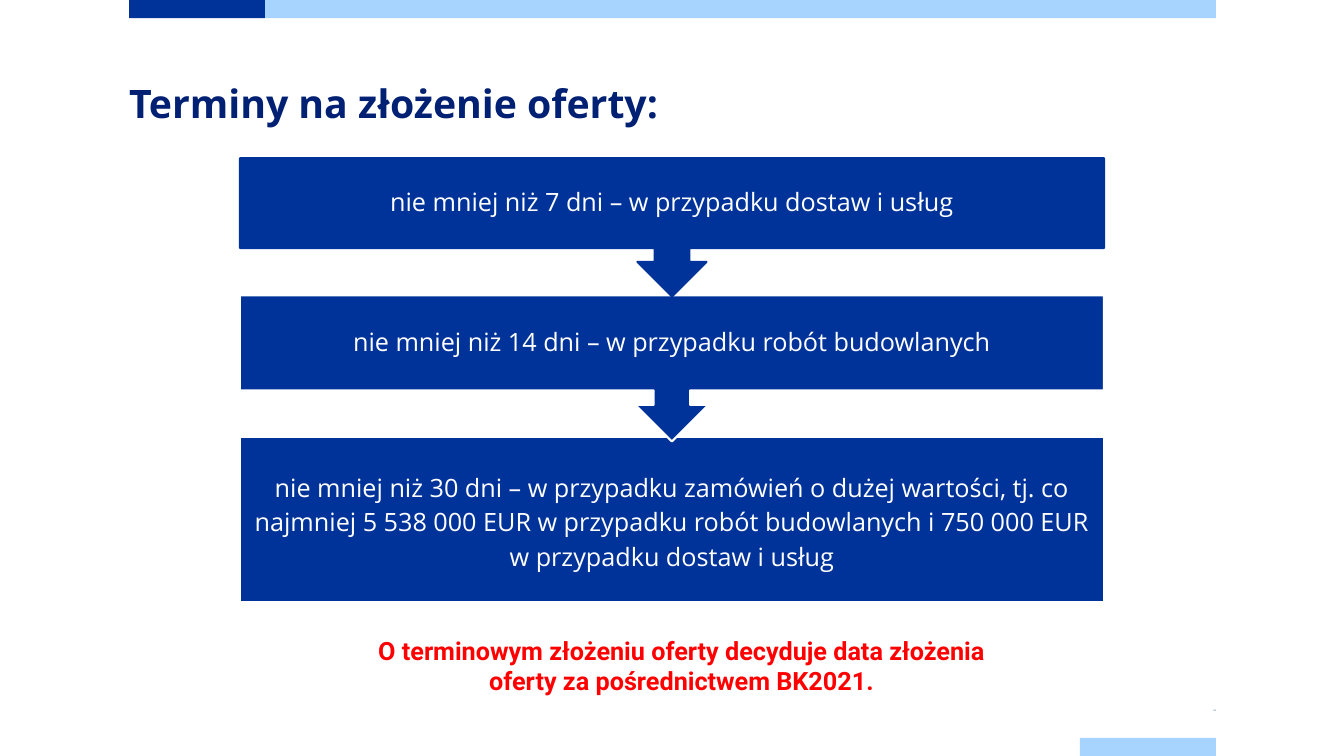
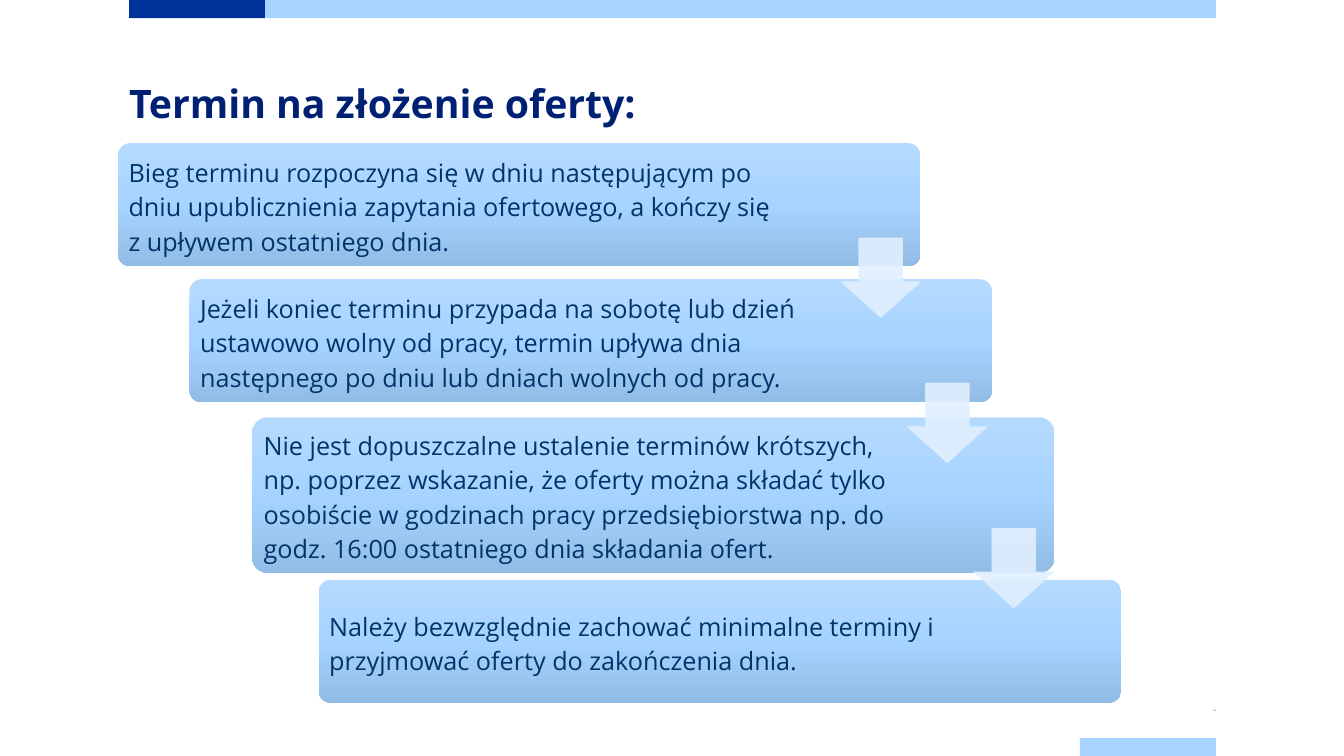
from copy import deepcopy

from lxml.etree import SubElement
from pptx import Presentation
from pptx.dml.color import RGBColor
from pptx.enum.shapes import MSO_SHAPE as Shape
from pptx.enum.text import MSO_ANCHOR as Anchor, PP_ALIGN as Align
from pptx.oxml.ns import qn
from pptx.util import Inches, Pt

NAVY = RGBColor(0x00, 0x33, 0x99)
SKY = RGBColor(0xA6, 0xD3, 0xFF)
SKY_LIGHT = RGBColor(0xB5, 0xDA, 0xFF)
SKY_DARK = RGBColor(0x91, 0xBC, 0xE5)
ICE = RGBColor(0xE1, 0xEF, 0xFF)
TITLE_BLUE = RGBColor(0x00, 0x20, 0x73)
CARD_TEXT = RGBColor(0x00, 0x35, 0x69)
WHITE = RGBColor(0xFF, 0xFF, 0xFF)
RED = RGBColor(0xFF, 0x00, 0x00)

MARGIN, CONTENT_WIDTH = 1.28, 10.78
BAND_HEIGHT, TAB_WIDTH = 0.18, 1.35
FOOTER_LEFT = MARGIN + CONTENT_WIDTH - TAB_WIDTH


class Builder:
    """Holds the deck, its style and the current page."""

    def __init__(self):
        self.deck = Presentation()
        self.deck.slide_width = Inches(13.33)
        self.deck.slide_height = Inches(7.5)
        self.page = None

    def new_page(self, title, number):
        self.page = self.deck.slides.add_slide(self.deck.slide_layouts[6])
        # Bands at the top and bottom
        self.shape(Shape.RECTANGLE, MARGIN, 0, TAB_WIDTH, BAND_HEIGHT, NAVY)
        self.shape(Shape.RECTANGLE, MARGIN + TAB_WIDTH, 0,
                   CONTENT_WIDTH - TAB_WIDTH, BAND_HEIGHT, SKY)
        self.shape(Shape.RECTANGLE, FOOTER_LEFT, 7.5 - BAND_HEIGHT,
                   TAB_WIDTH, BAND_HEIGHT, SKY)
        # Title and page number
        self.text(title, MARGIN, 0.89, CONTENT_WIDTH, 0.39, 28, TITLE_BLUE,
                  bold=True, spacing=Pt(26), insets=(0, 0, 0, 0))
        self.text(str(number), FOOTER_LEFT, 6.96, TAB_WIDTH, 0.18, 1.5,
                  TITLE_BLUE, align=Align.RIGHT, spacing=0.7,
                  anchor=Anchor.MIDDLE, insets=(0, 0.08, 0, 0.08))

    def shape(self, kind, left, top, width, height, fill=None, line=None,
              line_width=1.5):
        shape = self.page.shapes.add_shape(
            kind, Inches(left), Inches(top), Inches(width), Inches(height))
        shape.shadow.inherit = False
        if fill is not None:
            shape.fill.solid()
            shape.fill.fore_color.rgb = fill
        if line is None:
            shape.line.fill.background()
        else:
            shape.line.color.rgb = line
            shape.line.width = Pt(line_width)
        return shape

    def set_text(self, shape, text, size, color, font="Open Sans", bold=False,
                 align=Align.LEFT, spacing=1.0, anchor=Anchor.TOP,
                 insets=(0.1, 0.05, 0.1, 0.05)):
        frame = shape.text_frame
        frame.word_wrap = True
        frame.vertical_anchor = anchor
        (frame.margin_left, frame.margin_top,
         frame.margin_right, frame.margin_bottom) = map(Inches, insets)
        frame.text = text
        for para in frame.paragraphs:
            para.alignment = align
            para.line_spacing = spacing
            for span in para.runs:
                span.font.name = font
                span.font.size = Pt(size)
                span.font.bold = bold
                span.font.color.rgb = color

    def text(self, text, left, top, width, height, size, color, **style):
        box = self.page.shapes.add_textbox(
            Inches(left), Inches(top), Inches(width), Inches(height))
        self.set_text(box, text, size, color, **style)

    def step(self, kind, text, top, height, line, spacing):
        box = self.shape(kind, 2.38, top, 8.57, height, NAVY, line)
        self.set_text(box, text, 18, WHITE, align=Align.CENTER,
                      spacing=spacing, anchor=Anchor.MIDDLE,
                      insets=(0.14,) * 4)

    def card(self, text, left, top, height):
        card = self.shape(Shape.ROUNDED_RECTANGLE, left, top, 7.96, height)
        card.adjustments[0] = 0.1
        card.fill.gradient()
        card.fill.gradient_angle = 270
        # A third gradient stop
        stop_list = card._element.spPr.find(".//" + qn("a:gsLst"))
        stop_list.append(deepcopy(stop_list[0]))
        for stop, position, color in zip(card.fill.gradient_stops, (0, 0.5, 1),
                                         (SKY_LIGHT, SKY, SKY_DARK)):
            stop.position = position
            stop.color.rgb = color
        self.set_text(card, text, 18, CARD_TEXT, spacing=1.14,
                      anchor=Anchor.MIDDLE, insets=(0.07, 0.07, 1.42, 0.07))

    def arrow(self, left, top):
        arrow = self.shape(Shape.DOWN_ARROW, left, top, 0.79, 0.79, ICE, ICE, 0.5)
        arrow.adjustments[0] = 0.55
        arrow.adjustments[1] = 0.45
        for color in arrow._element.spPr.iter(qn("a:srgbClr")):
            SubElement(color, qn("a:alpha")).set("val", "90000")


def deadlines_page(builder):
    builder.new_page("Terminy na złożenie oferty:", 33)
    # Steps from the bottom up, so each arrow tip lies over the next box
    builder.step(
        Shape.RECTANGLE,
        "nie mniej niż 30 dni – w przypadku zamówień o dużej wartości, tj. co\n"
        "najmniej 5 538 000 EUR w przypadku robót budowlanych i 750 000 EUR "
        "w przypadku dostaw i usług", 4.34, 1.63, WHITE, 1.14)
    builder.step(Shape.DOWN_ARROW_CALLOUT,
                 "nie mniej niż 14 dni – w przypadku robót budowlanych",
                 2.93, 1.45, WHITE, 0.9)
    builder.step(Shape.DOWN_ARROW_CALLOUT,
                 "nie mniej niż 7 dni – w przypadku dostaw i usług",
                 1.57, 1.37, NAVY, 0.9)
    # Closing remark
    builder.text("O terminowym złożeniu oferty decyduje data złożenia oferty "
                 "za pośrednictwem BK2021.", 3.43, 6.25, 6.66, 0.71, 18, RED,
                 font="Roboto", bold=True, align=Align.CENTER)


def rules_page(builder):
    builder.new_page("Termin na złożenie oferty:", 34)
    # Cascade of rules: text, left, top, height
    cards = [
        ("Bieg terminu rozpoczyna się w dniu następującym po dniu "
         "upublicznienia zapytania ofertowego, a kończy się z upływem "
         "ostatniego dnia.", 1.17, 1.42, 1.22),
        ("Jeżeli koniec terminu przypada na sobotę lub dzień ustawowo wolny "
         "od pracy, termin upływa dnia następnego po dniu lub dniach wolnych "
         "od pracy.", 1.88, 2.77, 1.22),
        ("Nie jest dopuszczalne ustalenie terminów krótszych, np. poprzez "
         "wskazanie, że oferty można składać tylko osobiście w godzinach "
         "pracy przedsiębiorstwa np. do godz. 16:00 ostatniego dnia "
         "składania ofert.", 2.5, 4.14, 1.54),
        ("Należy bezwzględnie zachować minimalne terminy i przyjmować oferty "
         "do zakończenia dnia.", 3.16, 5.75, 1.22),
    ]
    for card in cards:
        builder.card(*card)
    # Arrows between neighbouring cards
    for index in range(len(cards) - 1):
        builder.arrow(8.34 + 0.66 * index, 2.36 + 1.44 * index)


def main():
    builder = Builder()
    deadlines_page(builder)
    rules_page(builder)
    builder.deck.save("out.pptx")


if __name__ == "__main__":
    main()
